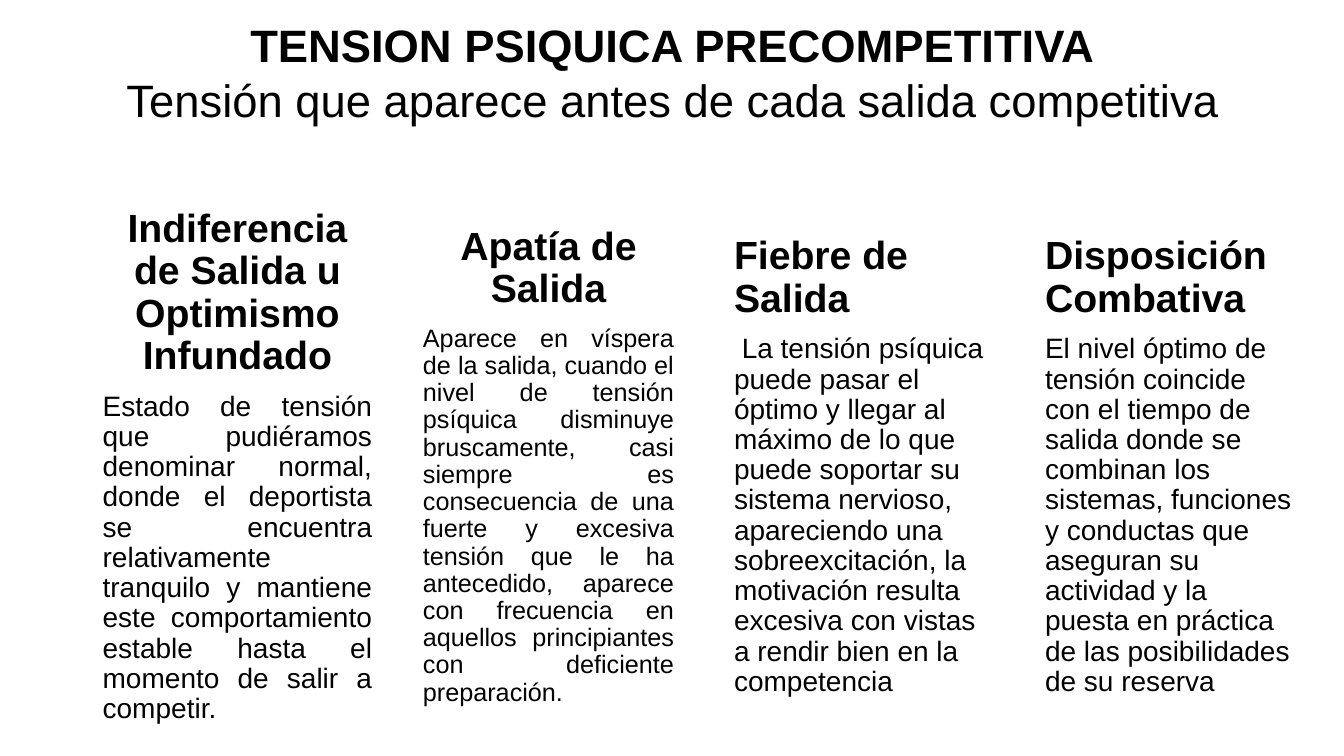
from dataclasses import dataclass

from pptx import Presentation
from pptx.dml.color import RGBColor
from pptx.enum.text import MSO_ANCHOR, MSO_AUTO_SIZE, PP_ALIGN
from pptx.util import Inches, Pt


@dataclass(frozen=True)
class Theme:
    font: str = "Arial"
    ink: RGBColor = RGBColor(0, 0, 0)
    title_size: float = 32.4
    heading_size: float = 28
    body_size: float = 20
    small_body_size: float = 18
    line_spacing: float = 0.9
    heading_gap: float = 10


THEME = Theme()
TITLE = "TENSION PSIQUICA PRECOMPETITIVA"
SUBTITLE = "Tensión que aparece antes de cada salida competitiva"

# Heading, body, heading alignment, body alignment, body size, side inset
STATES = [
    ("Indiferencia de Salida u Optimismo Infundado",
     "Estado de tensión que pudiéramos denominar normal, donde el deportista "
     "se encuentra relativamente tranquilo y mantiene este comportamiento "
     "estable hasta el momento de salir a competir.",
     PP_ALIGN.CENTER, PP_ALIGN.JUSTIFY, THEME.body_size, 0.1),
    ("Apatía de Salida",
     "Aparece en víspera de la salida, cuando el nivel de tensión psíquica "
     "disminuye bruscamente, casi siempre es consecuencia de una fuerte y "
     "excesiva tensión que le ha antecedido, aparece con frecuencia en "
     "aquellos principiantes con deficiente preparación.",
     PP_ALIGN.CENTER, PP_ALIGN.JUSTIFY, THEME.small_body_size, 0.19),
    ("Fiebre de Salida",
     " La tensión psíquica puede pasar el óptimo y llegar al máximo de lo que "
     "puede soportar su sistema nervioso, apareciendo una sobreexcitación, la "
     "motivación resulta excesiva con vistas a rendir bien en la competencia",
     PP_ALIGN.LEFT, PP_ALIGN.LEFT, THEME.body_size, 0.19),
    ("Disposición Combativa",
     "El nivel óptimo de tensión coincide con el tiempo de salida donde se "
     "combinan los sistemas, funciones y conductas que aseguran su actividad "
     "y la puesta en práctica de las posibilidades de su reserva",
     PP_ALIGN.LEFT, PP_ALIGN.LEFT, THEME.body_size, 0.19),
]
COLUMN_LEFT, COLUMN_TOP, COLUMN_STEP = 0.92, 3.05, 3.085
COLUMN_WIDTH, COLUMN_HEIGHT = 2.87, 3.16


class SlideBuilder:
    def __init__(self, page, theme):
        self.page = page
        self.theme = theme

    def prepare_frame(self, frame, side, top=0, bottom=0):
        frame.word_wrap = True
        frame.auto_size = MSO_AUTO_SIZE.NONE
        frame.vertical_anchor = MSO_ANCHOR.MIDDLE
        frame.margin_left = frame.margin_right = Inches(side)
        frame.margin_top, frame.margin_bottom = Inches(top), Inches(bottom)

    def fill_paragraph(self, paragraph, text, size, bold, align):
        paragraph.text = text
        paragraph.alignment = align
        for span in paragraph.runs:
            span.font.name = self.theme.font
            span.font.size = Pt(size)
            span.font.bold = bold
            span.font.color.rgb = self.theme.ink

    def add_title(self, title, subtitle):
        box = self.page.shapes.title
        box.left, box.top = Inches(0.92), Inches(0.24)
        box.width, box.height = Inches(11.5), Inches(1.01)
        frame = box.text_frame
        self.prepare_frame(frame, 0.1, top=0.02, bottom=0.08)
        size = self.theme.title_size
        self.fill_paragraph(frame.paragraphs[0], title, size, True,
                            PP_ALIGN.CENTER)
        self.fill_paragraph(frame.add_paragraph(), subtitle, size, False,
                            PP_ALIGN.CENTER)
        for paragraph in frame.paragraphs:
            paragraph.space_before = Pt(0)

    def add_column(self, left, heading, body, heading_align, body_align,
                   body_size, inset):
        box = self.page.shapes.add_textbox(
            Inches(left), Inches(COLUMN_TOP),
            Inches(COLUMN_WIDTH), Inches(COLUMN_HEIGHT))
        frame = box.text_frame
        self.prepare_frame(frame, inset)
        head = frame.paragraphs[0]
        self.fill_paragraph(head, heading, self.theme.heading_size, True,
                            heading_align)
        self.fill_paragraph(frame.add_paragraph(), body, body_size, False,
                            body_align)
        for paragraph in frame.paragraphs:
            paragraph.line_spacing = self.theme.line_spacing
        head.space_after = Pt(self.theme.heading_gap)


def main():
    deck = Presentation()
    deck.slide_width, deck.slide_height = Inches(13.33), Inches(7.5)
    page = deck.slides.add_slide(deck.slide_layouts.get_by_name("Title Only"))
    builder = SlideBuilder(page, THEME)
    builder.add_title(TITLE, SUBTITLE)
    for index, state in enumerate(STATES):
        builder.add_column(COLUMN_LEFT + index * COLUMN_STEP, *state)
    deck.save("out.pptx")


if __name__ == "__main__":
    main()
